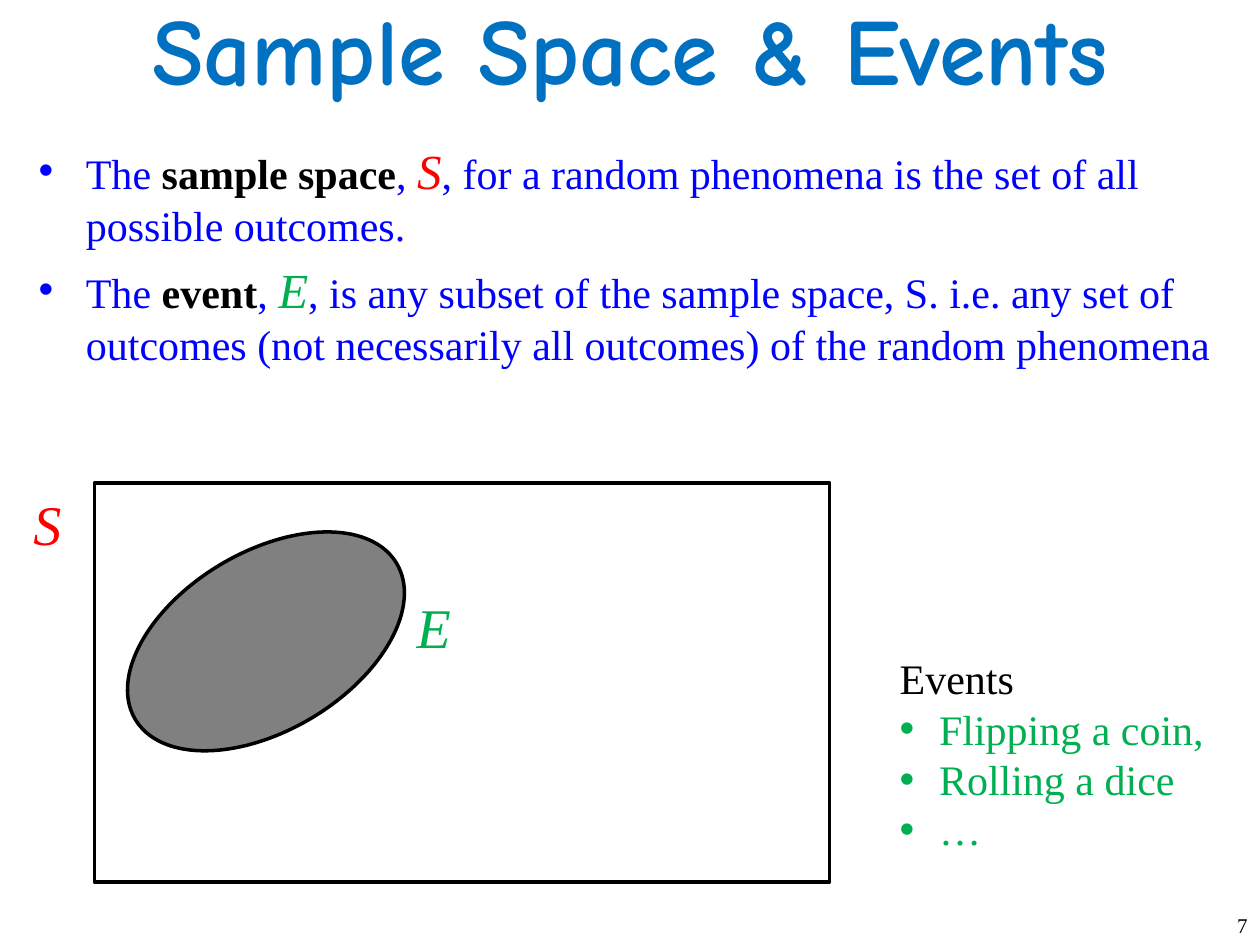
from lxml.etree import SubElement
from pptx import Presentation
from pptx.dml.color import RGBColor
from pptx.enum.shapes import MSO_SHAPE
from pptx.enum.text import MSO_ANCHOR, PP_ALIGN
from pptx.oxml.ns import qn
from pptx.util import Pt

HUES = {
    "title": "0070C0",
    "body": "0000FF",
    "space": "FF0000",
    "event": "00B050",
    "ink": "000000",
    "gray": "808080",
}
SERIF = "Times New Roman"


def hue(name):
    return RGBColor.from_string(HUES[name])


def style(item, form):
    for key, value in form.items():
        setattr(item, key, value)


def add_run(para, text, color, size=24, **form):
    run = para.add_run()
    run.text = text
    style(run.font, {"name": SERIF, "size": Pt(size), **form})
    run.font.color.rgb = hue(color)


def add_bullet(para, indent):
    props = para._p.get_or_add_pPr()
    props.set("marL", str(Pt(indent)))
    props.set("indent", str(-Pt(indent)))
    SubElement(props, qn("a:buFont"), typeface="Arial")
    SubElement(props, qn("a:buChar"), char="•")


def add_text(slide, box, paras, indent=0, anchor=MSO_ANCHOR.TOP, **form):
    frame = slide.shapes.add_textbox(*map(Pt, box)).text_frame
    style(frame, {"word_wrap": True, "vertical_anchor": anchor})
    for index, (runs, marked) in enumerate(paras):
        para = frame.add_paragraph() if index else frame.paragraphs[0]
        style(para, form)
        if marked:
            add_bullet(para, indent)
        for text, color, font in runs:
            add_run(para, text, color, **font)


def add_line(slide, box, text, color, font, **form):
    add_text(slide, box, [([(text, color, font)], False)], **form)


def add_shape(slide, kind, box, fill=None, turn=0):
    shape = slide.shapes.add_shape(kind, *map(Pt, box))
    shape.shadow.inherit = False
    shape.rotation = turn
    if fill:
        shape.fill.solid()
        shape.fill.fore_color.rgb = hue(fill)
    else:
        shape.fill.background()
    shape.line.color.rgb = hue("ink")
    shape.line.width = Pt(2)


def define(term, sign, color, rest):
    runs = [
        ("The ", "body", {}),
        (term, "ink", {"bold": True}),
        (", ", "body", {}),
        (sign, color, {"size": 28, "italic": True}),
        (rest, "body", {}),
    ]
    return runs, True


def main():
    deck = Presentation()
    style(deck, {"slide_width": Pt(720), "slide_height": Pt(540)})
    slide = deck.slides.add_slide(deck.slide_layouts[6])

    add_line(slide, (0, 0, 720, 54), "Sample Space & Events", "title",
             {"size": 54, "name": "Comic Neue", "bold": True},
             anchor=MSO_ANCHOR.MIDDLE, alignment=PP_ALIGN.CENTER)

    add_shape(slide, MSO_SHAPE.RECTANGLE, (54, 276, 420, 228))
    add_shape(slide, MSO_SHAPE.OVAL, (65, 315.5, 174, 102), "gray", 329.1)

    sign = {"size": 32, "italic": True}
    for text, color, box in (
        ("S", "space", (12, 276, 36, 42)),
        ("E", "event", (231, 335, 66, 42)),
    ):
        add_line(slide, box, text, color, sign, space_before=Pt(6.4))

    add_text(slide, (15, 77, 690, 158), [
        define("sample space", "S", "space",
               ", for a random phenomena is the set of all possible outcomes."),
        define("event", "E", "event",
               ", is any subset of the sample space, S. i.e. any set of outcomes "
               "(not necessarily all outcomes) of the random phenomena"),
    ], indent=27, space_before=Pt(5.6))

    add_line(slide, (648, 517.7, 72, 22.3), "7", "ink", {"size": 12},
             anchor=MSO_ANCHOR.MIDDLE, alignment=PP_ALIGN.RIGHT)

    cases = ("Flipping a coin,", "Rolling a dice", "…")
    add_text(slide, (507, 369.5, 198, 124),
             [([("Events", "ink", {})], False)]
             + [([(case, "event", {})], True) for case in cases],
             indent=22.5)

    deck.save("out.pptx")


if __name__ == "__main__":
    main()
